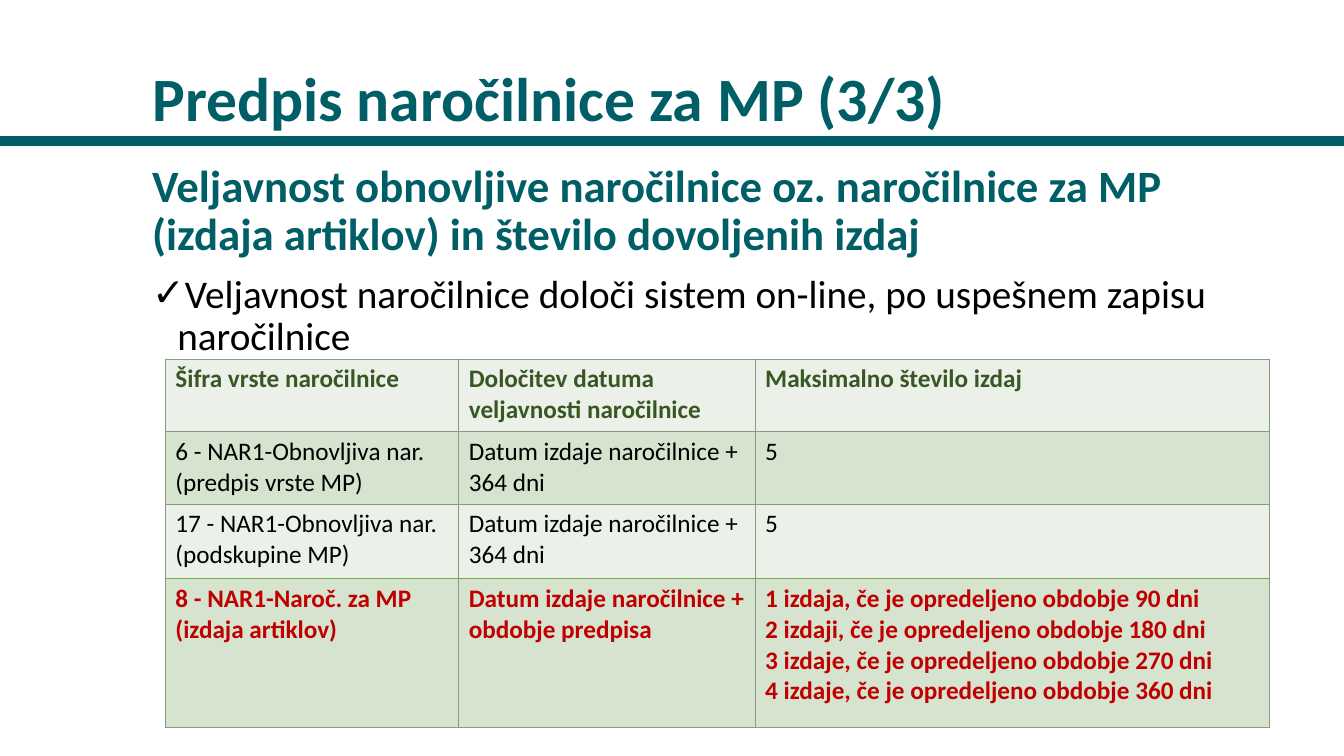
from lxml import etree
from pptx import Presentation
from pptx.dml.color import RGBColor
from pptx.enum.shapes import MSO_CONNECTOR
from pptx.enum.text import MSO_ANCHOR, MSO_AUTO_SIZE, PP_ALIGN
from pptx.oxml.ns import qn
from pptx.util import Inches, Pt

STRAIGHT = MSO_CONNECTOR.STRAIGHT
LEFT = PP_ALIGN.LEFT
BOTTOM, TOP = MSO_ANCHOR.BOTTOM, MSO_ANCHOR.TOP
NO_AUTOFIT = MSO_AUTO_SIZE.NONE

COLORS = {
    "teal": "005E66",
    "black": "000000",
    "header": "385723",
    "red": "C00000",
    "light": "EBF1E9",
    "dark": "D5E3CF",
    "grid": "8A9A86",
    "green": "70AD47",
}


def format_font(paragraph, size, color, bold):
    values = {"name": "Calibri", "size": Pt(size), "bold": bold}
    for run in paragraph.runs:
        for name, value in values.items():
            setattr(run.font, name, value)
        run.font.color.rgb = RGBColor.from_string(COLORS[color])


def add_border(cell, position, side, color, width):
    line = etree.Element(qn("a:" + side), w=str(Pt(width)))
    fill = etree.SubElement(line, qn("a:solidFill"))
    etree.SubElement(fill, qn("a:srgbClr"), val=COLORS[color])
    cell._tc.get_or_add_tcPr().insert(position, line)


presentation = Presentation()
presentation.slide_width = Inches(13.33)
presentation.slide_height = Inches(7.5)
slide = presentation.slides.add_slide(presentation.slide_layouts[1])

rule = slide.shapes.add_connector(STRAIGHT, 0, Inches(1.4), Inches(13.33), Inches(1.4))
rule.line.color.rgb = RGBColor.from_string(COLORS["teal"])
rule.line.width = Pt(7)
etree.SubElement(rule._element.spPr, qn("a:effectLst"))
slide.shapes._spTree.insert(2, rule._element)

title, body = slide.shapes.title, slide.placeholders[1]
placeholders = [
    (title, (1.41, 0.15, 11.01, 1.24), BOTTOM, [
        ("Predpis naročilnice za MP (3/3)", 44, "teal", True, None),
    ]),
    (body, (1.41, 1.57, 11.04, 5.76), TOP, [
        ("Veljavnost obnovljive naročilnice oz. naročilnice za MP (izdaja artiklov) "
         "in število dovoljenih izdaj", 32, "teal", True, None),
        ("Veljavnost naročilnice določi sistem on-line, po uspešnem zapisu naročilnice",
         28, "black", False, "✓"),
    ]),
]
for shape, place, anchor, lines in placeholders:
    shape.left, shape.top, shape.width, shape.height = map(Inches, place)
    frame = shape.text_frame
    frame.text = "\n".join(line[0] for line in lines)
    frame.word_wrap = True
    frame.auto_size = NO_AUTOFIT
    frame.vertical_anchor = anchor
    for index, (text, size, color, bold, bullet) in enumerate(lines):
        paragraph = frame.paragraphs[index]
        properties = paragraph._p.get_or_add_pPr()
        indent = Inches(0.25) if bullet else 0
        properties.set("marL", str(indent))
        properties.set("indent", str(-indent))
        if bullet:
            etree.SubElement(properties, qn("a:buChar"), char=bullet)
        else:
            etree.SubElement(properties, qn("a:buNone"))
        paragraph.alignment = LEFT
        paragraph.line_spacing = 0.9
        paragraph.space_before = Pt(10 if index else 0)
        format_font(paragraph, size, color, bold)

column_widths = [2.91, 2.94, 5.1]
rows = [
    (0.72, "header", True, [
        "Šifra vrste naročilnice",
        "Določitev datuma veljavnosti naročilnice",
        "Maksimalno število izdaj",
    ]),
    (0.72, "black", False, [
        "6 - NAR1-Obnovljiva nar. (predpis vrste MP)",
        "Datum izdaje naročilnice + 364 dni",
        "5",
    ]),
    (0.74, "black", False, [
        "17 - NAR1-Obnovljiva nar. (podskupine MP)",
        "Datum izdaje naročilnice + 364 dni",
        "5",
    ]),
    (1.48, "red", True, [
        "8 - NAR1-Naroč. za MP (izdaja artiklov)",
        "Datum izdaje naročilnice + obdobje predpisa",
        "1 izdaja, če je opredeljeno obdobje 90 dni\n"
        "2 izdaji, če je opredeljeno obdobje 180 dni\n"
        "3 izdaje, če je opredeljeno obdobje 270 dni\n"
        "4 izdaje, če je opredeljeno obdobje 360 dni",
    ]),
]
table = slide.shapes.add_table(
    len(rows), len(column_widths), Inches(1.64), Inches(3.56),
    Inches(sum(column_widths)), Inches(sum(row[0] for row in rows)),
).table
table.first_row = False
table.horz_banding = False
for column, width in zip(table.columns, column_widths):
    column.width = Inches(width)

last = len(rows) - 1
for row_index, (height, color, bold, texts) in enumerate(rows):
    table.rows[row_index].height = Inches(height)
    for column_index, text in enumerate(texts):
        cell = table.cell(row_index, column_index)
        cell.text = text
        cell.fill.solid()
        band = "dark" if row_index % 2 else "light"
        cell.fill.fore_color.rgb = RGBColor.from_string(COLORS[band])
        for position, side in enumerate(["lnL", "lnR", "lnT", "lnB"]):
            accented = (row_index, side) in [(last, "lnT"), (last - 1, "lnB")]
            add_border(cell, position, side, *(("green", 1) if accented else ("grid", 0.5)))
        for paragraph in cell.text_frame.paragraphs:
            format_font(paragraph, 18, color, bold)

presentation.save("out.pptx")
